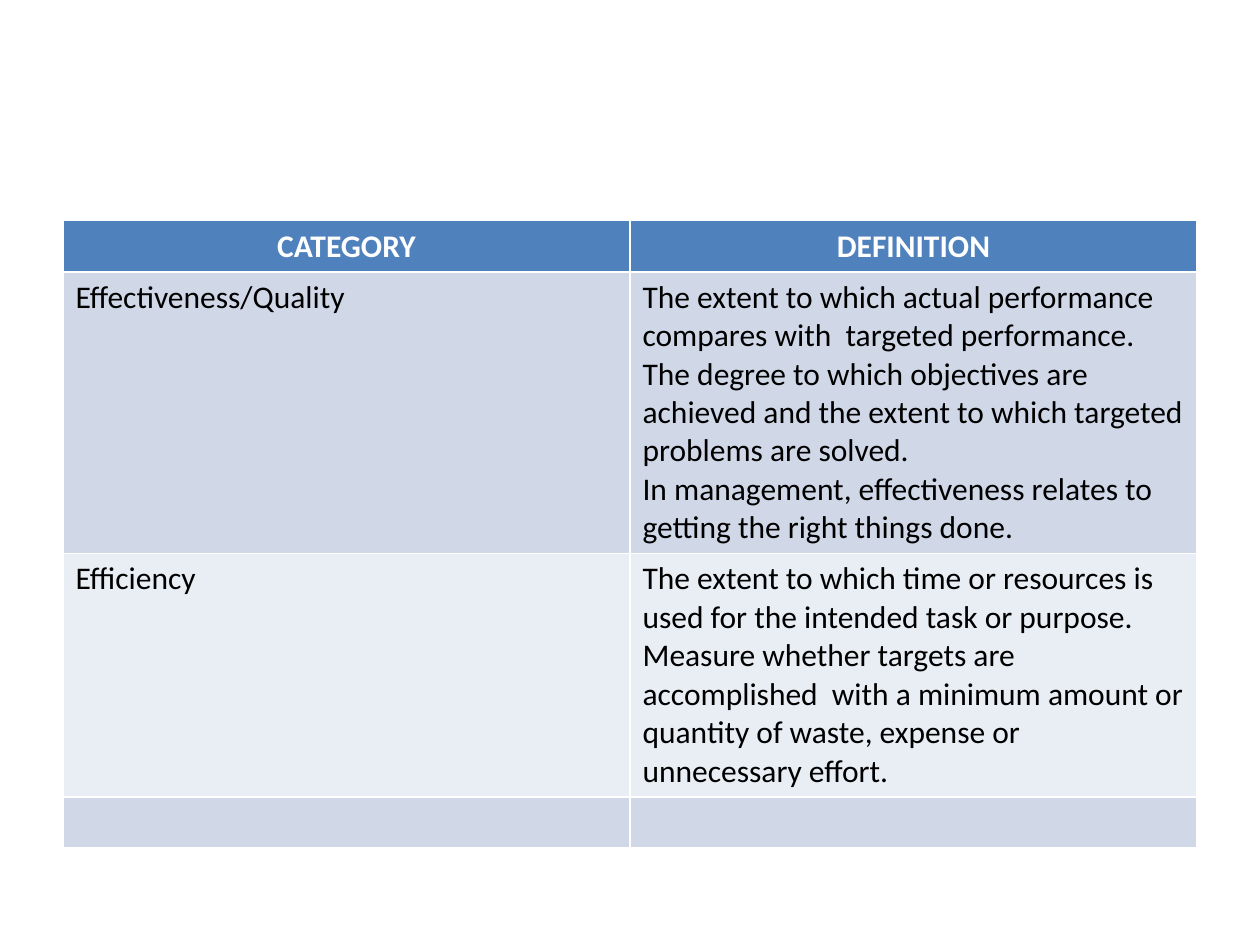
from pptx import Presentation
from pptx.dml.color import RGBColor
from pptx.enum.text import PP_ALIGN as Align
from pptx.util import Cm, Pt

WHITE = RGBColor(0xFF, 0xFF, 0xFF)
BLACK = RGBColor(0x00, 0x00, 0x00)
HEADER_BLUE = RGBColor(0x4F, 0x81, 0xBD)
BAND_DARK = RGBColor(0xD0, 0xD8, 0xE8)
BAND_LIGHT = RGBColor(0xE9, 0xED, 0xF4)

FONT = "Calibri"
FONT_SIZE = Pt(18)
COLUMN_WIDTH = Cm(11.43)
ROW_HEIGHTS = [Cm(1.03), Cm(5.68), Cm(4.9), Cm(1.03)]

ROWS = [
    (["CATEGORY"], ["DEFINITION"]),
    (
        ["Effectiveness/Quality"],
        [
            "The extent to which actual performance compares with  targeted performance.",
            "The degree to which objectives are achieved and the extent to which "
            "targeted problems are solved.",
            "In management, effectiveness relates to getting the right things done.",
        ],
    ),
    (
        ["Efficiency"],
        [
            "The extent to which time or resources is used for the intended task or "
            "purpose. Measure whether targets are accomplished  with a minimum amount "
            "or quantity of waste, expense or unnecessary effort.",
        ],
    ),
    ([], []),
]


def add_run(paragraph, text, color, bold):
    run = paragraph.add_run()
    run.text = text
    run.font.name = FONT
    run.font.size = FONT_SIZE
    run.font.bold = bold
    run.font.color.rgb = color


def fill_cell(cell, lines, fill, is_header):
    cell.fill.solid()
    cell.fill.fore_color.rgb = fill
    text_frame = cell.text_frame
    for index, line in enumerate(lines):
        paragraph = text_frame.add_paragraph() if index else text_frame.paragraphs[0]
        paragraph.alignment = Align.CENTER if is_header else Align.LEFT
        add_run(paragraph, line, WHITE if is_header else BLACK, is_header)


def row_fill(row_index):
    if row_index == 0:
        return HEADER_BLUE
    return BAND_DARK if row_index % 2 else BAND_LIGHT


def add_definition_table(slide, left, top):
    frame = slide.shapes.add_table(
        len(ROWS), 2, left, top, 2 * COLUMN_WIDTH, sum(ROW_HEIGHTS)
    )
    table = frame.table
    for column in table.columns:
        column.width = COLUMN_WIDTH
    for row_index, (row, height) in enumerate(zip(table.rows, ROW_HEIGHTS)):
        row.height = height
        for cell, lines in zip(row.cells, ROWS[row_index]):
            fill_cell(cell, lines, row_fill(row_index), row_index == 0)


def main():
    presentation = Presentation()
    presentation.slide_width = Cm(25.4)
    presentation.slide_height = Cm(19.05)
    slide = presentation.slides.add_slide(presentation.slide_layouts[6])
    add_definition_table(slide, Cm(1.27), Cm(4.45))
    presentation.save("out.pptx")


if __name__ == "__main__":
    main()
